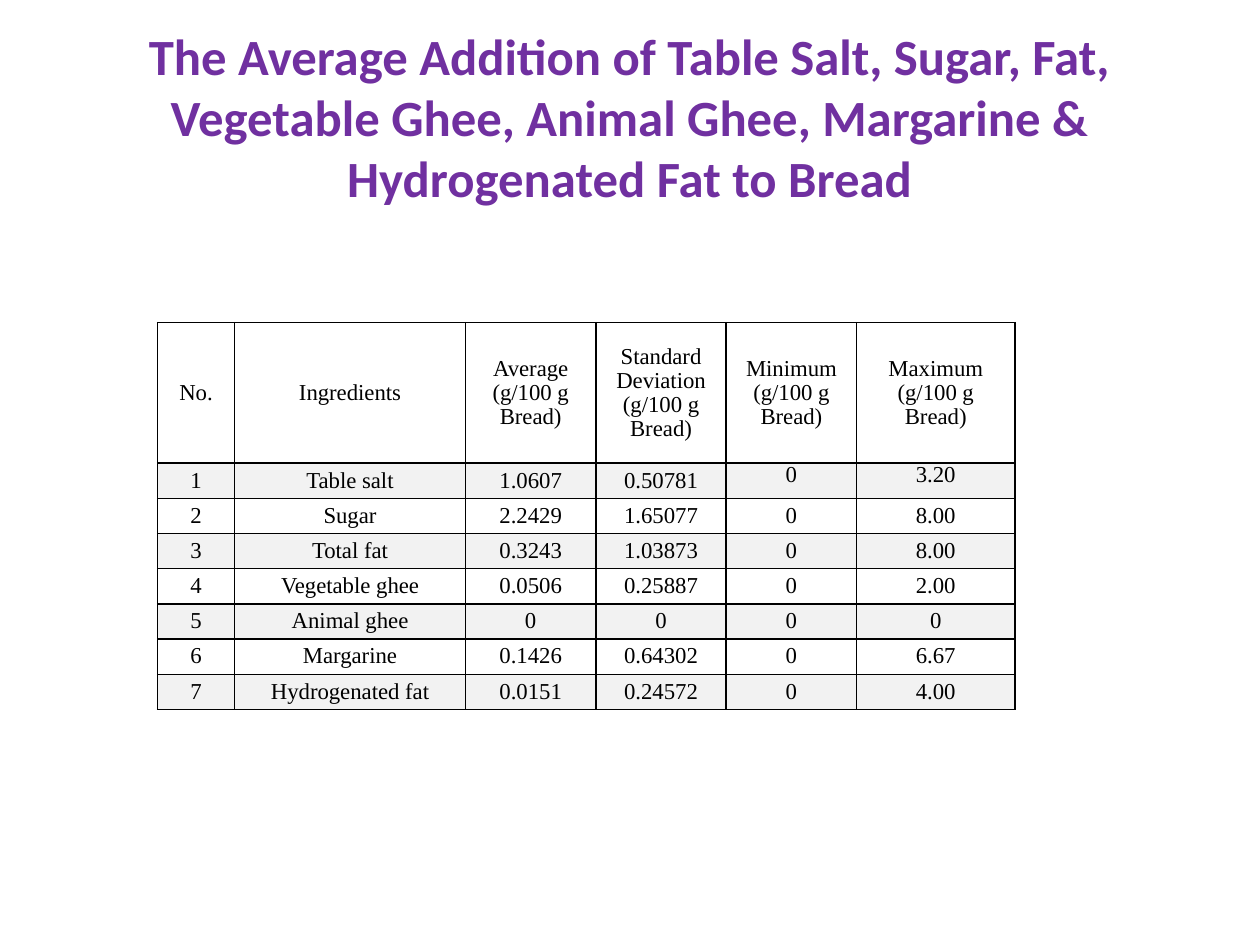
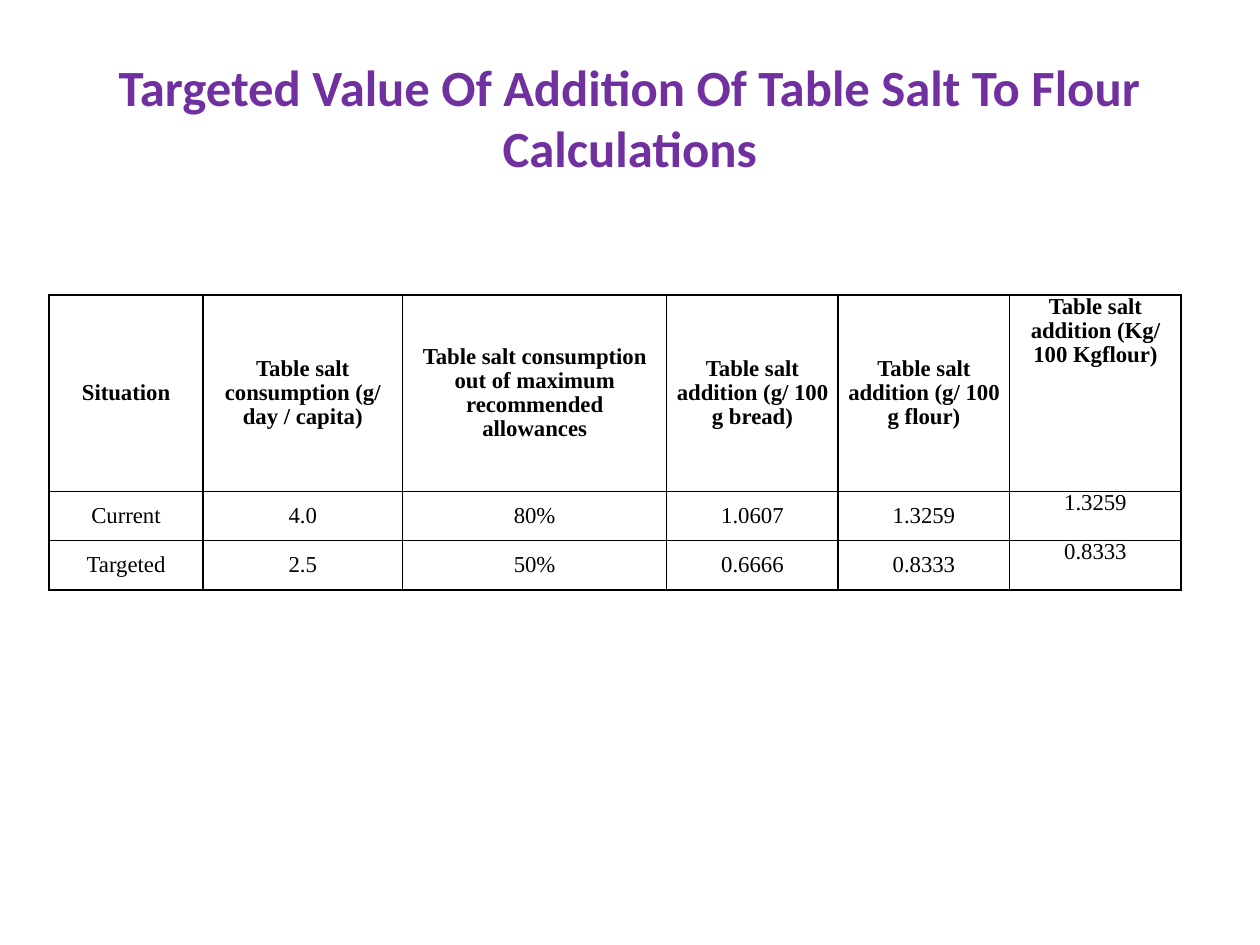
"""Build two slides on salt and other ingredients added to bread and flour."""
from dataclasses import dataclass

from lxml.etree import SubElement
from pptx import Presentation
from pptx.dml.color import RGBColor as Rgb
from pptx.enum.text import MSO_ANCHOR as Anchor, PP_ALIGN as Align
from pptx.oxml.ns import qn
from pptx.util import Pt


@dataclass(frozen=True)
class Theme:
    title: Rgb = Rgb(0x70, 0x30, 0xA0)
    ink: Rgb = Rgb(0, 0, 0)
    band: Rgb = Rgb(0xF2, 0xF2, 0xF2)
    head_font: str = "Calibri"
    body_font: str = "Times New Roman"
    head_size: int = 29
    body_size: int = 13
    pitch: float = 0.96
    rule: int = 1


theme = Theme()


def write(para, text, font, size, color, bold):
    para.alignment = Align.CENTER
    run = para.add_run()
    run.text = text
    run.font.name = font
    run.font.size = Pt(size)
    run.font.color.rgb = color
    run.font.bold = bold


def frame(cell):
    props = cell._tc.get_or_add_tcPr()
    for i, side in enumerate(("lnL", "lnR", "lnT", "lnB")):
        line = props.makeelement(qn("a:" + side), {"w": str(Pt(theme.rule))})
        fill = SubElement(line, qn("a:solidFill"))
        SubElement(fill, qn("a:srgbClr"), val=str(theme.ink))
        props.insert(i, line)


pages = [
    {
        "title": "The Average Addition of Table Salt, Sugar, Fat, Vegetable Ghee, "
                 "Animal Ghee, Margarine & Hydrogenated Fat to Bread",
        "at": (90, 184.3),
        "cols": (44, 132, 74.5, 74.5, 74.5, 90.5),
        "rows": (80.4, 20.1),
        "bold": False,
        "banded": True,
        "top": {(1, 4), (1, 5)},
        "data": [
            ("No.", "Ingredients", "Average (g/100 g Bread)",
             "Standard Deviation (g/100 g Bread)",
             "Minimum\n(g/100 g Bread)", "Maximum\n(g/100 g Bread)"),
            ("1", "Table salt", "1.0607", "0.50781", "0", "3.20"),
            ("2", "Sugar", "2.2429", "1.65077", "0", "8.00"),
            ("3", "Total fat", "0.3243", "1.03873", "0", "8.00"),
            ("4", "Vegetable ghee", "0.0506", "0.25887", "0", "2.00"),
            ("5", "Animal ghee", "0", "0", "0", "0"),
            ("6", "Margarine", "0.1426", "0.64302", "0", "6.67"),
            ("7", "Hydrogenated fat", "0.0151", "0.24572", "0", "4.00"),
        ],
    },
    {
        "title": "Targeted Value Of Addition Of Table Salt To Flour Calculations",
        "at": (28, 168.6),
        "cols": (88, 114, 151, 98, 98, 98),
        "rows": (112.3, 28.1),
        "bold": True,
        "banded": False,
        "top": {(0, 5), (1, 5), (2, 5)},
        "data": [
            ("Situation", "Table salt consumption (g/ day / capita)",
             "Table salt consumption out of maximum recommended allowances",
             "Table salt addition (g/ 100 g bread)",
             "Table salt addition (g/ 100 g flour)",
             "Table salt addition (Kg/ 100 Kgflour)"),
            ("Current", "4.0", "80%", "1.0607", "1.3259", "1.3259"),
            ("Targeted", "2.5", "50%", "0.6666", "0.8333", "0.8333"),
        ],
    },
]

deck = Presentation()
deck.slide_width, deck.slide_height = Pt(720), Pt(540)

for page in pages:
    slide = deck.slides.add_slide(deck.slide_layouts[6])
    box = slide.shapes.add_textbox(Pt(36), Pt(21.6), Pt(648), Pt(90)).text_frame
    box.word_wrap = True
    box.vertical_anchor = Anchor.MIDDLE
    write(box.paragraphs[0], page["title"], theme.head_font, theme.head_size,
          theme.title, True)

    data, cols = page["data"], page["cols"]
    first, rest = page["rows"]
    left, top = page["at"]
    high = first + rest * (len(data) - 1)
    grid = slide.shapes.add_table(len(data), len(cols), Pt(left), Pt(top),
                                  Pt(sum(cols)), Pt(high)).table
    grid.horz_banding = False
    grid.first_row = False
    for col, width in zip(grid.columns, cols):
        col.width = Pt(width)

    for r, row in enumerate(data):
        grid.rows[r].height = Pt(rest if r else first)
        for c, text in enumerate(row):
            cell = grid.cell(r, c)
            cell.margin_left = cell.margin_right = Pt(5)
            cell.margin_top = cell.margin_bottom = Pt(0)
            high_up = (r, c) in page["top"]
            cell.vertical_anchor = Anchor.TOP if high_up else Anchor.MIDDLE
            if page["banded"] and r % 2:
                cell.fill.solid()
                cell.fill.fore_color.rgb = theme.band
            else:
                cell.fill.background()
            frame(cell)
            for i, part in enumerate(text.split("\n")):
                body = cell.text_frame
                para = body.add_paragraph() if i else body.paragraphs[0]
                para.line_spacing = theme.pitch
                write(para, part, theme.body_font, theme.body_size, theme.ink,
                      page["bold"] and r == 0)

deck.save("out.pptx")
